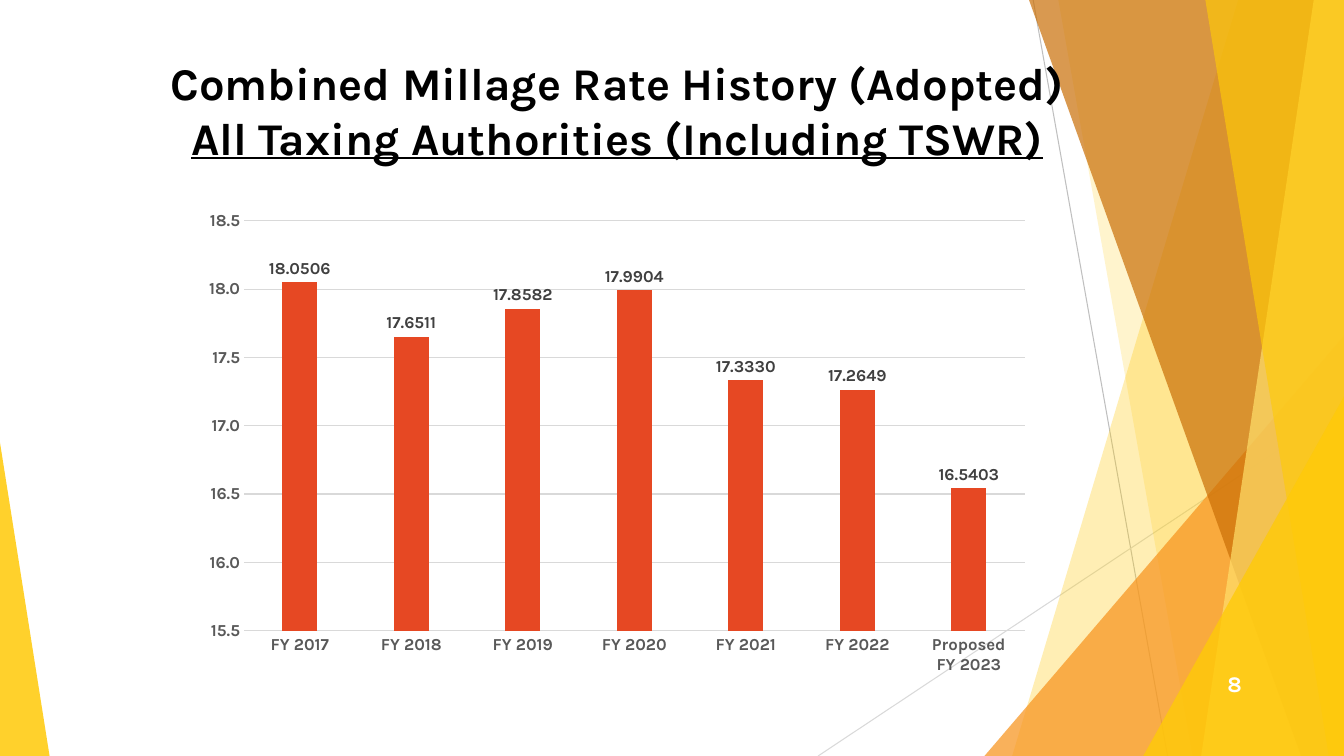
from dataclasses import dataclass

from lxml.etree import SubElement
from pptx import Presentation
from pptx.chart.data import CategoryChartData
from pptx.dml.color import RGBColor
from pptx.enum.chart import XL_CHART_TYPE, XL_LABEL_POSITION, XL_TICK_MARK
from pptx.enum.shapes import MSO_CONNECTOR, MSO_SHAPE
from pptx.enum.text import MSO_ANCHOR, PP_ALIGN
from pptx.oxml.ns import qn
from pptx.util import Inches, Pt

COLS, ROWS = 160, 90
CELL = Inches(13.333) / COLS
FONT = "Karla"
GOLD = "FFCA08"


@dataclass
class Ray:
    """A thin line between two grid points."""
    start: tuple[float, float]
    end: tuple[float, float]
    color: str


@dataclass
class Band:
    """A full-height area from a slanted left side to the right edge."""
    top: float
    foot: float
    color: str
    alpha: int


@dataclass
class Wedge:
    """A right-angled triangle standing on the bottom edge."""
    left: float
    top: float
    width: float
    peak: float
    color: str
    alpha: int


RAYS = [
    Ray((123, 0), (139, ROWS), "BFBFBF"),
    Ray((COLS, 48.4), (97.4, ROWS), "D9D9D9"),
]
FACETS = [
    Band(147.4, 120.5, GOLD, 30),
    Band(126, 142, GOLD, 20),
    Wedge(117.2, 40, 42.8, 1, "F8931D", 72),
    Band(122.5, 154.9, "CA6F06", 70),
    Band(156.4, 143, "FFDF6B", 70),
    Band(143.5, 158.2, GOLD, 65),
    Wedge(136.1, 47.2, 23.9, 1, GOLD, 80),
    Wedge(0, 52.7, 5.9, 0, GOLD, 85),
]
RATES = {
    "FY 2017": 18.0506,
    "FY 2018": 17.6511,
    "FY 2019": 17.8582,
    "FY 2020": 17.9904,
    "FY 2021": 17.333,
    "FY 2022": 17.2649,
    "Proposed\nFY 2023": 16.5403,
}


def grid(*cells: float) -> list[int]:
    return [round(cell * CELL) for cell in cells]


def rgb(color: str) -> RGBColor:
    return RGBColor.from_string(color)


def style(font, size: float, color: str, bold: bool = True) -> None:
    font.name, font.size, font.bold = FONT, Pt(size), bold
    font.color.rgb = rgb(color)


def stroke(line, color: str) -> None:
    line.color.rgb, line.width = rgb(color), Pt(0.75)


def draw_ray(slide, ray: Ray) -> None:
    line = slide.shapes.add_connector(
        MSO_CONNECTOR.STRAIGHT, *grid(*ray.start, *ray.end))
    stroke(line.line, ray.color)
    SubElement(line._element.spPr, qn("a:effectLst"))


def draw_facet(slide, facet: Band | Wedge) -> None:
    if isinstance(facet, Band):
        pen = slide.shapes.build_freeform(*grid(facet.top, 0))
        pen.add_line_segments(
            [grid(COLS, 0), grid(COLS, ROWS), grid(facet.foot, ROWS)])
        shape = pen.convert_to_shape()
    else:
        shape = slide.shapes.add_shape(
            MSO_SHAPE.ISOSCELES_TRIANGLE,
            *grid(facet.left, facet.top, facet.width, ROWS - facet.top))
        shape.adjustments[0] = facet.peak
    shape.shadow.inherit = False
    shape.line.fill.background()
    shape.fill.solid()
    shape.fill.fore_color.rgb = rgb(facet.color)
    tint = shape._element.spPr.find(qn("a:solidFill"))[0]
    SubElement(tint, qn("a:alpha"), val=str(facet.alpha * 1000))


def add_text(slide, lines: list[str], box: tuple, *, size: float, color: str,
             align: PP_ALIGN, anchor: MSO_ANCHOR = MSO_ANCHOR.TOP,
             under: int = -1) -> None:
    """Write lines in one paragraph; under is the index of the underlined one."""
    frame = slide.shapes.add_textbox(*grid(*box)).text_frame
    frame.word_wrap, frame.vertical_anchor = True, anchor
    para = frame.paragraphs[0]
    para.alignment = align
    for i, line in enumerate(lines):
        if i:
            para.add_line_break()
        run = para.add_run()
        run.text = line
        style(run.font, size, color)
        if i == under:
            run.font.underline = True


def set_plot(chart, **shares: float) -> None:
    """Fix the inner plot area as shares of the chart."""
    area = chart._chartSpace.chart.plotArea
    layout = area.find(qn("c:layout"))
    if layout is None:
        layout = area.makeelement(qn("c:layout"))
        area.insert(0, layout)
    manual = SubElement(layout, qn("c:manualLayout"))
    parts = {"layoutTarget": "inner", "xMode": "edge", "yMode": "edge"} | shares
    for name, val in parts.items():
        SubElement(manual, qn(f"c:{name}"), val=str(val))


def add_rates(slide) -> None:
    data = CategoryChartData(number_format="0.0000")
    data.categories = list(RATES)
    data.add_series("Series 1", list(RATES.values()))
    chart = slide.shapes.add_chart(
        XL_CHART_TYPE.COLUMN_CLUSTERED, *grid(23, 24, 101, 57.4), data).chart
    chart.has_legend = chart.has_title = False
    style(chart.font, 10, "000000", False)
    set_plot(chart, x=0.06, y=0.04, w=0.92, h=0.85)

    years, mills = chart.category_axis, chart.value_axis
    for axis in (years, mills):
        axis.major_tick_mark = axis.minor_tick_mark = XL_TICK_MARK.NONE
        style(axis.tick_labels.font, 12, "595959")
    stroke(years.format.line, "D9D9D9")
    mills.format.line.fill.background()
    stroke(mills.major_gridlines.format.line, "D9D9D9")
    mills.minimum_scale, mills.maximum_scale, mills.major_unit = 15.5, 18.5, 0.5
    mills.tick_labels.number_format = "0.0"
    mills.tick_labels.number_format_is_linked = False

    plot = chart.plots[0]
    plot.gap_width, plot.overlap, plot.vary_by_categories = 219, -27, False
    bars = plot.series[0]
    bars.format.fill.solid()
    bars.format.fill.fore_color.rgb = rgb("E64823")
    labels = bars.data_labels
    labels.show_value, labels.position = True, XL_LABEL_POSITION.OUTSIDE_END
    labels.number_format, labels.number_format_is_linked = "0.0000", False
    style(labels.font, 12, "404040")


def main() -> None:
    deck = Presentation()
    deck.slide_width, deck.slide_height = grid(COLS, ROWS)
    slide = deck.slides.add_slide(deck.slide_layouts[6])
    for ray in RAYS:
        draw_ray(slide, ray)
    for facet in FACETS:
        draw_facet(slide, facet)
    add_text(slide, ["Combined Millage Rate History (Adopted)",
                     "All Taxing Authorities (Including TSWR)"],
             (19, 6, 109, 13), size=32.4, color="000000",
             align=PP_ALIGN.CENTER, under=1)
    add_text(slide, ["8"], (140, 79, 9, 4.8), size=16, color="FFFFFF",
             align=PP_ALIGN.RIGHT, anchor=MSO_ANCHOR.MIDDLE)
    add_rates(slide)
    deck.save("out.pptx")


if __name__ == "__main__":
    main()
